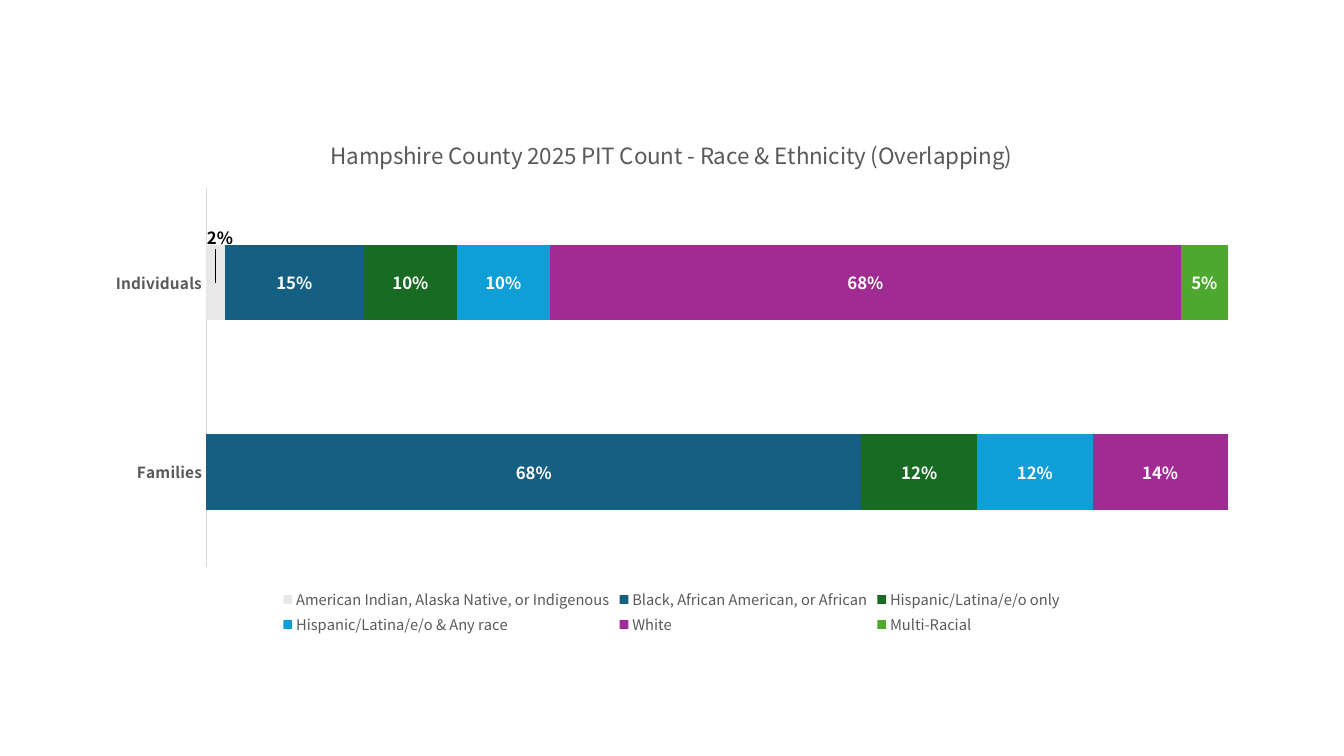
from lxml import etree
from pptx import Presentation
from pptx.chart.data import CategoryChartData
from pptx.dml.color import RGBColor
from pptx.enum.chart import XL_CHART_TYPE as ChartType
from pptx.enum.chart import XL_LABEL_POSITION as LabelPosition
from pptx.enum.chart import XL_LEGEND_POSITION as LegendPosition
from pptx.enum.chart import XL_TICK_MARK as TickMark
from pptx.oxml import parse_xml
from pptx.oxml.ns import nsdecls, qn
from pptx.util import Pt

FONT = "Noto Sans CJK SC"
GREY = "595959"
TITLE = "Hampshire County 2025 PIT Count - Race & Ethnicity (Overlapping)"
HOUSEHOLDS = ["Families", "Individuals"]
GROUPS = [
    ("American Indian, Alaska Native, or Indigenous", (0, 0.02), "E8E8E8", "000000"),
    ("Black, African American, or African", (0.68, 0.15), "156082", "FFFFFF"),
    ("Hispanic/Latina/e/o only", (0.12, 0.1), "196B24", "FFFFFF"),
    ("Hispanic/Latina/e/o & Any race", (0.12, 0.1), "0F9ED5", "FFFFFF"),
    ("White", (0.14, 0.68), "A02B93", "FFFFFF"),
    ("Multi-Racial", (0, 0.05), "4EA72E", "FFFFFF"),
]


def color(hex_string):
    """Return the colour for a hex string."""
    return RGBColor.from_string(hex_string)


def style_font(font, size, hex_string, bold=False):
    """Set typeface, size, colour and weight."""
    font.name = FONT
    font.size = Pt(size)
    font.color.rgb = color(hex_string)
    font.bold = bold


def manual_layout(**settings):
    """Return a chart layout element holding the given settings."""
    layout = parse_xml(f"<c:layout {nsdecls('c')}><c:manualLayout/></c:layout>")
    for name, value in settings.items():
        etree.SubElement(layout[0], qn(f"c:{name}")).set("val", str(value))
    return layout


def add_race_chart(slide):
    """Add the stacked bar chart and return it."""
    race_data = CategoryChartData(number_format="0%")
    race_data.categories = HOUSEHOLDS
    for name, shares, _, _ in GROUPS:
        race_data.add_series(name, shares)
    frame = slide.shapes.add_chart(
        ChartType.BAR_STACKED_100, Pt(66.2), Pt(83.5), Pt(827.3), Pt(373), race_data
    )
    return frame.chart


def style_title(chart):
    """Write and format the chart title."""
    chart.has_title = True
    heading = chart.chart_title.text_frame
    heading.text = TITLE
    style_font(heading.paragraphs[0].runs[0].font, 16, GREY)
    chart.chart_title.include_in_layout = False


def style_axes(chart):
    """Show household names only, beside a thin grey line."""
    households = chart.category_axis
    households.major_tick_mark = households.minor_tick_mark = TickMark.NONE
    households.format.line.color.rgb = color("D9D9D9")
    households.format.line.width = Pt(0.75)
    style_font(households.tick_labels.font, 11, GREY, bold=True)
    shares = chart.value_axis
    shares.has_major_gridlines = False
    shares.visible = False
    shares.tick_labels.number_format = "0%"
    shares.tick_labels.number_format_is_linked = False


def style_legend(chart):
    """Place the legend below the bars."""
    chart.has_legend = True
    chart.legend.position = LegendPosition.BOTTOM
    chart.legend.include_in_layout = False
    style_font(chart.legend.font, 10.5, GREY)


def style_group(group, fill, label_color):
    """Fill one group's bars and label its non-zero shares."""
    group.format.fill.solid()
    group.format.fill.fore_color.rgb = color(fill)
    labels = group.data_labels
    labels.show_value = True
    labels.position = LabelPosition.CENTER
    labels.number_format = "0%;;"
    labels.number_format_is_linked = False
    style_font(labels.font, 12, label_color, bold=True)


def raise_label(group, index, x, y):
    """Shift one share label by fractions of the chart size."""
    label = group.points[index].data_label
    style_font(label.font, 12, "000000", bold=True)
    label.position = LabelPosition.CENTER
    label_xml = group.data_labels._element.find(qn("c:dLbl"))
    label_xml.find(qn("c:idx")).addnext(manual_layout(x=x, y=y))


def set_plot_area(chart):
    """Fix the inner plot area within the chart."""
    plot_area = chart._chartSpace.chart.plotArea
    for old_layout in plot_area.findall(qn("c:layout")):
        plot_area.remove(old_layout)
    plot_area.insert(0, manual_layout(
        layoutTarget="inner", xMode="edge", yMode="edge",
        x=0.098, y=0.136, w=0.882, h=0.726,
    ))


def main():
    """Build and save the slide."""
    deck = Presentation()
    deck.slide_width, deck.slide_height = Pt(960), Pt(540)
    slide = deck.slides.add_slide(deck.slide_layouts[6])
    chart = add_race_chart(slide)
    chart.font.name = "Roboto"
    chart.font.size = Pt(10)
    style_title(chart)
    style_axes(chart)
    style_legend(chart)
    bars = chart.plots[0]
    bars.gap_width, bars.overlap = 150, 100
    for group, (_, _, fill, label_color) in zip(bars.series, GROUPS):
        style_group(group, fill, label_color)
    raise_label(bars.series[0], 1, 0.004, -0.087)
    set_plot_area(chart)
    deck.save("out.pptx")


if __name__ == "__main__":
    main()
